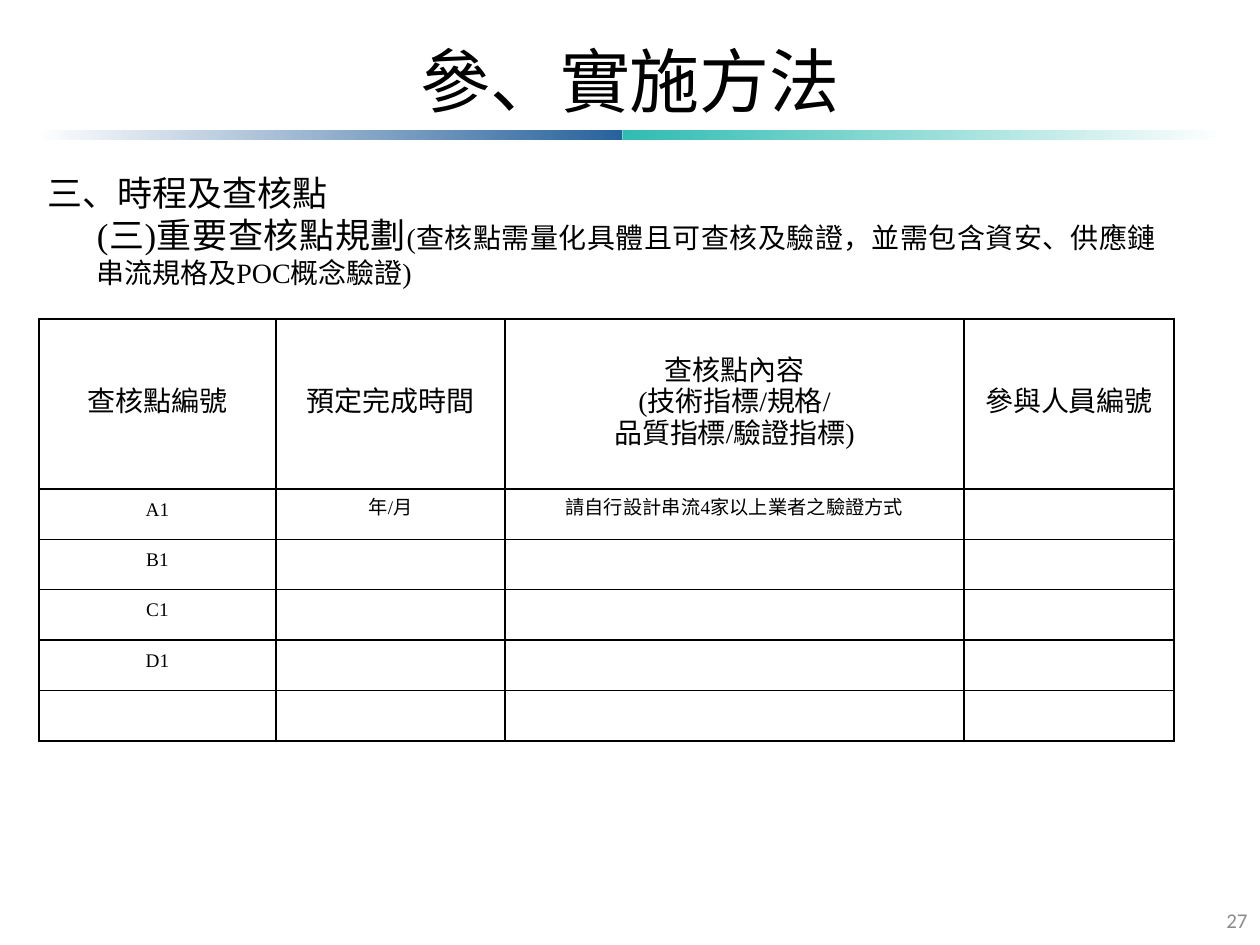
import pptx
import pptx.util
import pptx.dml.color
import pptx.enum.shapes
import pptx.enum.text
from lxml import etree

Inches = pptx.util.Inches
Pt = pptx.util.Pt
ALIGN = pptx.enum.text.PP_ALIGN
ANCHOR = pptx.enum.text.MSO_ANCHOR
DRAWING = "http://schemas.openxmlformats.org/drawingml/2006/main"
COLORS = {"text": "000000", "white": "FFFFFF", "blue": "28629C",
          "teal": "2FBCB2", "number": "8C8C8C"}


def format_paragraph(paragraph, size, alignment, color="text", name="Times New Roman"):
    paragraph.alignment = alignment
    paragraph.font.size = Pt(size)
    paragraph.font.name = name
    paragraph.font.color.rgb = pptx.dml.color.RGBColor.from_string(COLORS[color])


def add_borders(cell):
    properties = cell._tc.get_or_add_tcPr()
    for side in ("lnL", "lnR", "lnT", "lnB"):
        line = etree.SubElement(properties, f"{{{DRAWING}}}{side}", w=str(Pt(1)))
        fill = etree.SubElement(line, f"{{{DRAWING}}}solidFill")
        etree.SubElement(fill, f"{{{DRAWING}}}srgbClr", val=COLORS["text"])


presentation = pptx.Presentation()
presentation.slide_width = Inches(10)
presentation.slide_height = Inches(7.5)
slide = presentation.slides.add_slide(presentation.slide_layouts[5])

# Two-part gradient rule under the title
for left, width, start, end in ((0.28, 4.66, "white", "blue"), (4.94, 4.78, "teal", "white")):
    bar = slide.shapes.add_shape(pptx.enum.shapes.MSO_SHAPE.RECTANGLE,
                                 Inches(left), Inches(1.03), Inches(width), Inches(0.08))
    bar.shadow.inherit = False
    bar.line.fill.background()
    bar.fill.gradient()
    bar.fill.gradient_angle = 0
    for stop, position, color in zip(bar.fill.gradient_stops, (0, 1), (start, end)):
        stop.position = position
        stop.color.rgb = pptx.dml.color.RGBColor.from_string(COLORS[color])

title = slide.shapes.title
title.left, title.top, title.width, title.height = (
    Inches(0.5), Inches(0.13), Inches(9), Inches(1.01))
title.text_frame.text = "參、實施方法"
title.text_frame.vertical_anchor = ANCHOR.MIDDLE
format_paragraph(title.text_frame.paragraphs[0], 40, ALIGN.CENTER)

# Section heading
heading = slide.shapes.add_textbox(Inches(0.28), Inches(1.31), Inches(9), Inches(1.04))
heading.text_frame.word_wrap = True
heading.text_frame.text = "三、時程及查核點"
subheading = heading.text_frame.add_paragraph()
subheading._p.get_or_add_pPr().set("marL", str(Inches(0.39)))
subheading.add_run().text = "(三)重要查核點規劃"
note = subheading.add_run()
note.text = "(查核點需量化具體且可查核及驗證，並需包含資安、供應鏈串流規格及POC概念驗證)"
for paragraph in heading.text_frame.paragraphs:
    format_paragraph(paragraph, 20, ALIGN.JUSTIFY)
note.font.size = Pt(16)

# Checkpoint table
rows = [
    ["查核點編號", "預定完成時間", "查核點內容\n(技術指標/規格/\n品質指標/驗證指標)", "參與人員編號"],
    ["A1", "年/月", "請自行設計串流4家以上業者之驗證方式", ""],
    ["B1", "", "", ""],
    ["C1", "", "", ""],
    ["D1", "", "", ""],
    ["", "", "", ""],
]
table = slide.shapes.add_table(len(rows), len(rows[0]), Inches(0.31), Inches(2.53),
                               Inches(9), Inches(3.35)).table
table.first_row = False
table.horz_banding = False
for column, width in zip(table.columns, (1.88, 1.82, 3.64, 1.67)):
    column.width = Inches(width)
for row_index, texts in enumerate(rows):
    is_header = row_index == 0
    table.rows[row_index].height = Inches(1.35 if is_header else 0.4)
    for column_index, text in enumerate(texts):
        cell = table.cell(row_index, column_index)
        add_borders(cell)
        cell.fill.background()
        cell.margin_left = cell.margin_right = Inches(0.04)
        cell.margin_top = cell.margin_bottom = 0
        cell.vertical_anchor = ANCHOR.MIDDLE if is_header else ANCHOR.TOP
        cell.text = text
        for paragraph in cell.text_frame.paragraphs:
            paragraph.line_spacing = Pt(18)
            format_paragraph(paragraph, 16 if is_header else 11, ALIGN.CENTER)

number = slide.shapes.add_textbox(Inches(7.67), Inches(7.1), Inches(2.33), Inches(0.4))
number.text_frame.word_wrap = True
number.text_frame.vertical_anchor = ANCHOR.MIDDLE
number.text_frame.text = "27"
format_paragraph(number.text_frame.paragraphs[0], 12, ALIGN.RIGHT, "number", "Calibri")

presentation.save("out.pptx")
